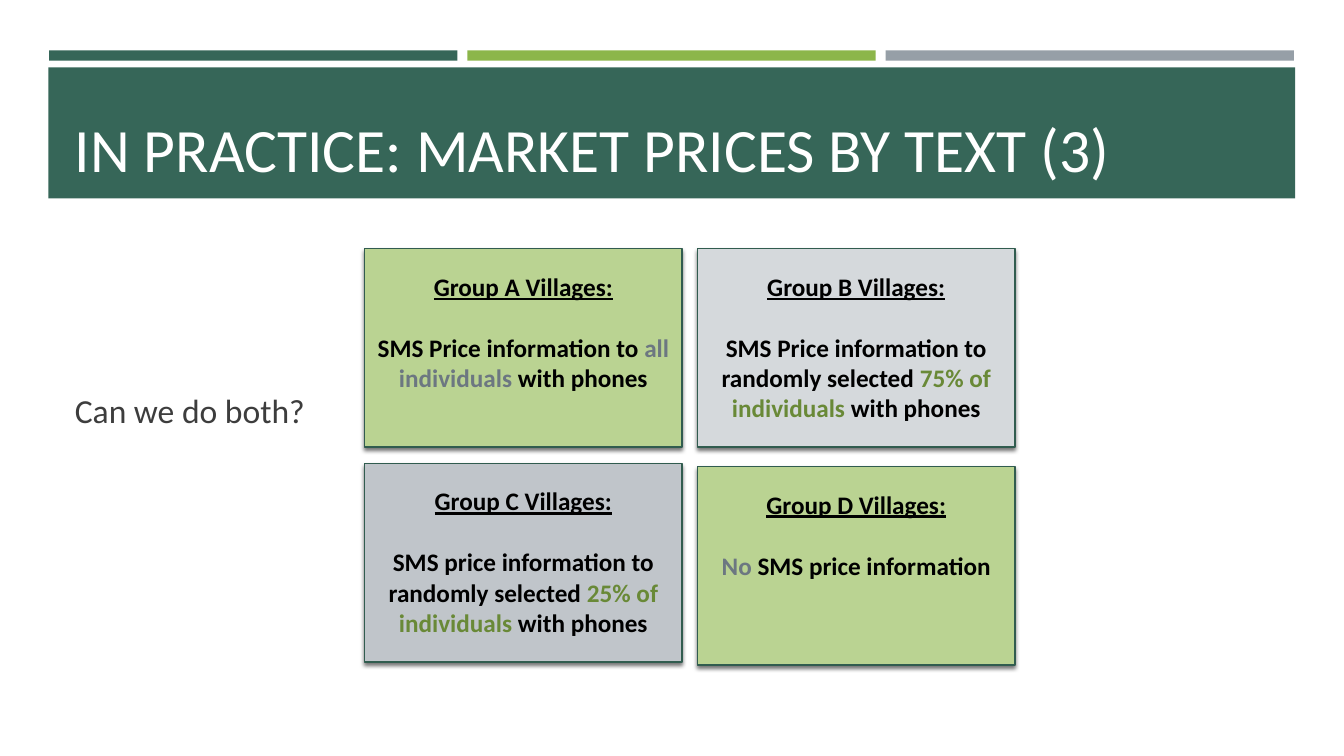
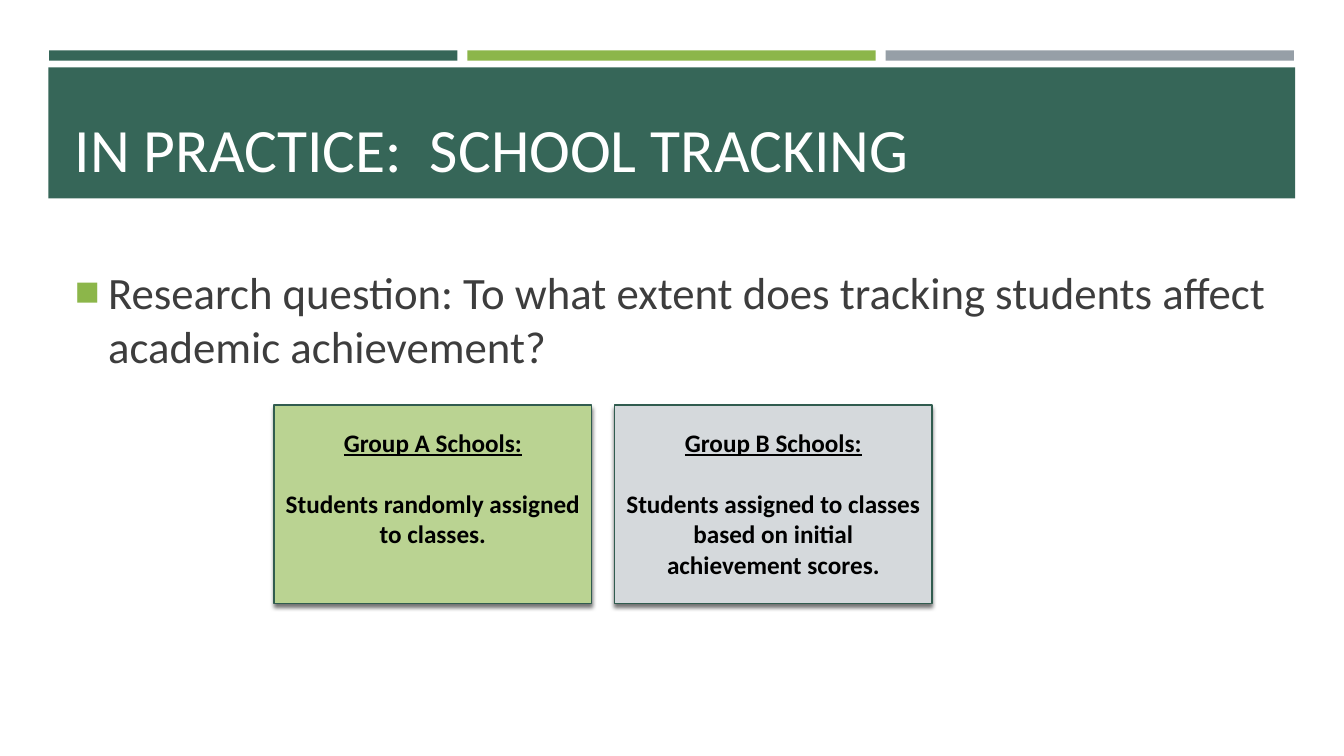
from dataclasses import dataclass

from lxml import etree
from pptx import Presentation
from pptx import util as u
from pptx.dml import color
from pptx.enum import shapes, text
from pptx.oxml import ns

FONT = "Calibri"
GREEN, LIME, GREY = "366658", "8CB64A", "969FA7"
PALE, MIST, STEEL = "BAD392", "D5D9DC", "C0C5CA"
WHITE, BLACK, INK, EDGE = "FFFFFF", "000000", "3D3D3D", "315C4F"
SLATE, OLIVE = "6C7781", "698937"
CARD_W, CARD_H = 8, 5


@dataclass
class Box:
    x: float
    y: float
    w: float
    h: float

    def cm(self) -> tuple:
        return tuple(u.Cm(n) for n in (self.x, self.y, self.w, self.h))


@dataclass
class Card:
    x: float
    y: float
    fill: str
    head: str
    runs: list  # (words, colour) pairs


@dataclass
class Page:
    title: str
    body: str
    box: Box
    size: int
    bullet: bool
    cards: list


def rgb(code: str) -> color.RGBColor:
    return color.RGBColor.from_string(code)


def sub(node, tag: str, **atts):
    """Append a DrawingML child."""
    return etree.SubElement(node, ns.qn("a:" + tag), **atts)


def style(par, size: int, tint: str, bold: bool = False) -> None:
    font = par.font
    font.name, font.size, font.bold = FONT, u.Pt(size), bold
    font.color.rgb = rgb(tint)


def rect(slide, box: Box, fill: str):
    shape = slide.shapes.add_shape(shapes.MSO_SHAPE.RECTANGLE, *box.cm())
    shape.shadow.inherit = False
    shape.fill.solid()
    shape.fill.fore_color.rgb = rgb(fill)
    shape.line.fill.background()
    return shape


def add_bands(slide, master) -> None:
    """Draw the header bands and move them behind all else on the master."""
    bands = [rect(slide, Box(1.24 + 10.54 * i, 1.27, 10.29, 0.26), tint)
             for i, tint in enumerate((GREEN, LIME, GREY))]
    bands.append(rect(slide, Box(1.22, 1.7, 31.42, 3.3), GREEN))
    tree = master.element.cSld.spTree
    for i, band in enumerate(bands):
        tree.insert(2 + i, band.element)


def fill_holder(holder, box: Box, words: str, size: int, tint: str, anchor):
    """Place a placeholder and set its one paragraph."""
    holder.left, holder.top, holder.width, holder.height = box.cm()
    frame = holder.text_frame
    frame.text = words
    frame.word_wrap = True
    frame.auto_size = text.MSO_AUTO_SIZE.NONE
    frame.vertical_anchor = anchor
    par = frame.paragraphs[0]
    par.alignment = text.PP_ALIGN.LEFT
    par.space_before = u.Pt(0)
    style(par, size, tint)
    return frame


def set_bullet(par, shown: bool) -> None:
    props = par._p.get_or_add_pPr()
    step = u.Cm(0.84) if shown else 0
    props.set("marL", str(step))
    props.set("indent", str(-step))
    marks = []
    if shown:
        tint = sub(props, "buClr")
        sub(tint, "srgbClr", val=LIME)
        marks = [tint, sub(props, "buSzPct", val="92000"),
                 sub(props, "buChar", char="■")]
    else:
        marks = [sub(props, "buNone")]
    # Bullet marks must come before the default run style
    base = props.find(ns.qn("a:defRPr"))
    for mark in marks:
        base.addprevious(mark)


def add_shade(shape) -> None:
    """Give a card its soft shadow."""
    list_ = shape.element.spPr.find(ns.qn("a:effectLst"))
    shade = sub(list_, "outerShdw", blurRad=str(u.Pt(3)), dist=str(u.Pt(2)),
                dir="5400000", algn="ctr", rotWithShape="0")
    tint = sub(shade, "srgbClr", val=BLACK)
    sub(tint, "alpha", val="55000")


def add_card(slide, card: Card) -> None:
    shape = rect(slide, Box(card.x, card.y, CARD_W, CARD_H), card.fill)
    shape.line.color.rgb = rgb(EDGE)
    shape.line.width = u.Pt(1)
    add_shade(shape)
    frame = shape.text_frame
    frame.word_wrap = True
    frame.vertical_anchor = text.MSO_ANCHOR.TOP
    frame.margin_top = u.Cm(0.56)
    head, note = frame.paragraphs[0], frame.add_paragraph()
    for par in (head, note):
        par.alignment = text.PP_ALIGN.CENTER
        style(par, 18, BLACK, bold=True)
    head.font.underline = True
    head.add_run().text = card.head
    note.space_before = u.Pt(22)
    for words, tint in card.runs:
        run = note.add_run()
        run.text = words
        run.font.color.rgb = rgb(tint)


def add_page(slide, page: Page) -> None:
    fill_holder(slide.shapes.title, Box(1.63, 1.96, 30.63, 2.82), page.title,
                44, WHITE, text.MSO_ANCHOR.BOTTOM)
    frame = fill_holder(slide.placeholders[1], page.box, page.body,
                        page.size, INK, text.MSO_ANCHOR.MIDDLE)
    frame.margin_bottom = u.Cm(1)
    set_bullet(frame.paragraphs[0], page.bullet)
    for card in page.cards:
        add_card(slide, card)


PAGES = [
    Page("IN PRACTICE: MARKET PRICES BY TEXT (3)", "Can we do both?",
         Box(1.63, 5.66, 30.63, 10.21), 24, False, [
             Card(9.19, 6.27, PALE, "Group A Villages:",
                  [("SMS Price information to ", BLACK),
                   ("all individuals ", SLATE), ("with phones", BLACK)]),
             Card(17.58, 6.27, MIST, "Group B Villages:",
                  [("SMS Price information to randomly selected ", BLACK),
                   ("75% of individuals ", OLIVE), ("with phones", BLACK)]),
             Card(9.19, 11.68, STEEL, "Group C Villages:",
                  [("SMS price information to randomly selected ", BLACK),
                   ("25% of individuals ", OLIVE), ("with phones", BLACK)]),
             Card(17.58, 11.76, PALE, "Group D Villages:",
                  [("No", SLATE), (" SMS price information", BLACK)]),
         ]),
    Page("IN PRACTICE:  SCHOOL TRACKING",
         "Research question: To what extent does tracking students affect "
         "academic achievement?",
         Box(1.63, 6.05, 30.63, 4.83), 32, True, [
             Card(6.91, 10.21, PALE, "Group A Schools:",
                  [("Students randomly assigned to classes.", BLACK)]),
             Card(15.49, 10.21, MIST, "Group B Schools:",
                  [("Students assigned to classes based on initial "
                    "achievement scores.", BLACK)]),
         ]),
]


def main() -> None:
    prs = Presentation()
    prs.slide_width, prs.slide_height = u.Cm(33.87), u.Cm(19.05)
    for i, page in enumerate(PAGES):
        slide = prs.slides.add_slide(prs.slide_layouts[1])
        if i == 0:
            add_bands(slide, prs.slide_master)
        add_page(slide, page)
    prs.save("out.pptx")


if __name__ == "__main__":
    main()
